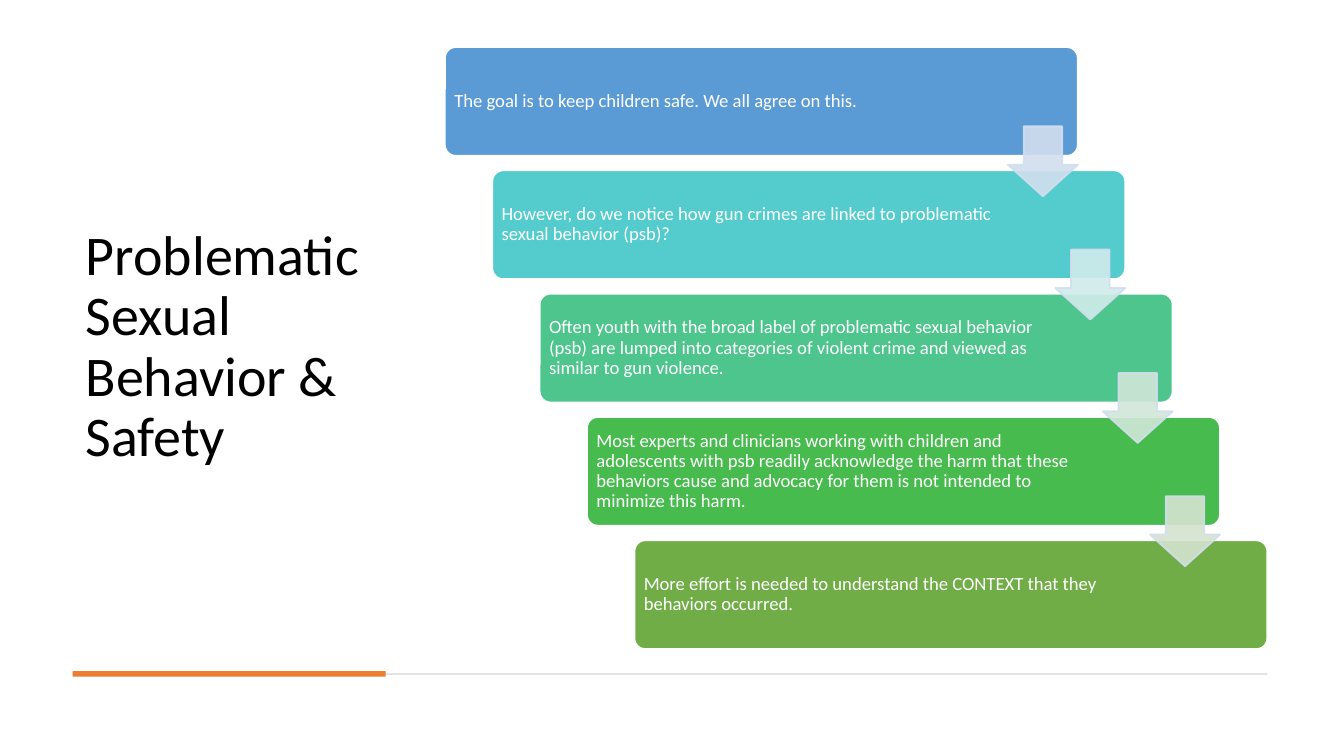
import pptx
import pptx.dml.color
import pptx.enum.shapes
import pptx.enum.text
import pptx.oxml
import pptx.oxml.ns
import pptx.util

TITLE = "Problematic Sexual Behavior & Safety"

# Text and fill of each step, then the fill of the arrow leaving it
STEPS = [
    ("The goal is to keep children safe. We all agree on this.", "blue", "pale blue"),
    ("However, do we notice how gun crimes are linked to problematic sexual behavior (psb)?",
     "teal", "pale teal"),
    ("Often youth with the broad label of problematic sexual behavior (psb) are lumped into "
     "categories of violent crime and viewed as similar to gun violence.", "mint", "pale mint"),
    ("Most experts and clinicians working with children and adolescents with psb readily "
     "acknowledge the harm that these behaviors cause and advocacy for them is not intended "
     "to minimize this harm.", "green", "pale green"),
    ("More effort is needed to understand the CONTEXT that they behaviors occurred.",
     "olive", None),
]

COLORS = {
    "black": "000000", "white": "FFFFFF", "rule": "D5D5D5", "accent": "ED7D31",
    "blue": "5B9BD5", "teal": "54CCCD", "mint": "4DC58D", "green": "48BB4F", "olive": "70AD47",
    "pale blue": "D2DEEF", "pale teal": "D0ECEA", "pale mint": "D0E7D8", "pale green": "D5E3CF",
}
FONT = "Calibri"

# Lengths in inches, on a 16:9 slide
SLIDE_W = 10
SLIDE_H = SLIDE_W * 9 / 16
LEFT, RIGHT, TOP, BOTTOM = 0.54, 9.43, 0.35, 4.83
TITLE_W = 2.33
STEPS_LEFT = 3.31
STEP_W, STEP_H = 4.71, 0.81
STEP_DX = (RIGHT - STEPS_LEFT - STEP_W) / (len(STEPS) - 1)
STEP_DY = (BOTTOM - TOP - STEP_H) / (len(STEPS) - 1)
PAD = 0.03
TEXT_W = 3.78
ARROW = 0.52
ARROW_DROP = 0.59
RULE_Y, RULE_H = 5.01, 0.01
ACCENT_H = 0.04

SHAPE = pptx.enum.shapes.MSO_SHAPE
inches = pptx.util.Inches


def rgb(name):
    return pptx.dml.color.RGBColor.from_string(COLORS[name])


def add_block(shapes, kind, place, fill, line=None, adjustments=()):
    block = shapes.add_shape(kind, *map(inches, place))
    block.shadow.inherit = False
    for index, value in enumerate(adjustments):
        block.adjustments[index] = value
    block.fill.solid()
    block.fill.fore_color.rgb = rgb(fill)
    if line:
        block.line.color.rgb = rgb(line)
        block.line.width = pptx.util.Pt(1)
    else:
        block.line.fill.background()
    return block


def add_text(shapes, place, text, size, color, inset=None):
    box = shapes.add_textbox(*map(inches, place))
    frame = box.text_frame
    frame.word_wrap = True
    frame.vertical_anchor = pptx.enum.text.MSO_ANCHOR.MIDDLE
    if inset is not None:
        frame.margin_left = frame.margin_right = inches(inset)
        frame.margin_top = frame.margin_bottom = inches(inset)
    para = frame.paragraphs[0]
    para.line_spacing = 0.9
    span = para.add_run()
    span.text = text
    span.font.name = FONT
    span.font.size = pptx.util.Pt(size)
    span.font.color.rgb = rgb(color)


def set_opacity(block, percent):
    """Make the fill and line of a block partly transparent."""
    for color in block._element.spPr.iter(pptx.oxml.ns.qn("a:srgbClr")):
        alpha = pptx.oxml.parse_xml(
            f'<a:alpha {pptx.oxml.ns.nsdecls("a")} val="{percent * 1000}"/>')
        color.append(alpha)


def add_steps(page):
    shapes = page.shapes.add_group_shape().shapes
    corners = [(STEPS_LEFT + i * STEP_DX, TOP + i * STEP_DY) for i in range(len(STEPS))]
    for (x, y), (text, fill, _) in zip(corners, STEPS):
        add_block(shapes, SHAPE.ROUNDED_RECTANGLE, (x, y, STEP_W, STEP_H),
                  fill, "white", [0.1])
        add_text(shapes, (x + PAD, y + PAD, TEXT_W, STEP_H - 2 * PAD),
                 text, 10, "white", inset=0.04)
    for (x, y), (_, _, fill) in zip(corners, STEPS):
        if fill:
            arrow = add_block(shapes, SHAPE.DOWN_ARROW,
                              (x + STEP_W - ARROW, y + ARROW_DROP, ARROW, ARROW),
                              fill, "pale blue", [0.55, 0.45])
            set_opacity(arrow, 90)


def main():
    deck = pptx.Presentation()
    deck.slide_width, deck.slide_height = inches(SLIDE_W), inches(SLIDE_H)
    page = deck.slides.add_slide(deck.slide_layouts[6])
    add_text(page.shapes, (LEFT, TOP, TITLE_W, BOTTOM - TOP), TITLE, 30, "black")
    add_block(page.shapes, SHAPE.RECTANGLE, (LEFT, RULE_Y, RIGHT - LEFT, RULE_H), "rule")
    accent_y = RULE_Y + (RULE_H - ACCENT_H) / 2
    add_block(page.shapes, SHAPE.RECTANGLE, (LEFT, accent_y, TITLE_W, ACCENT_H), "accent")
    add_steps(page)
    deck.save("out.pptx")


if __name__ == "__main__":
    main()
